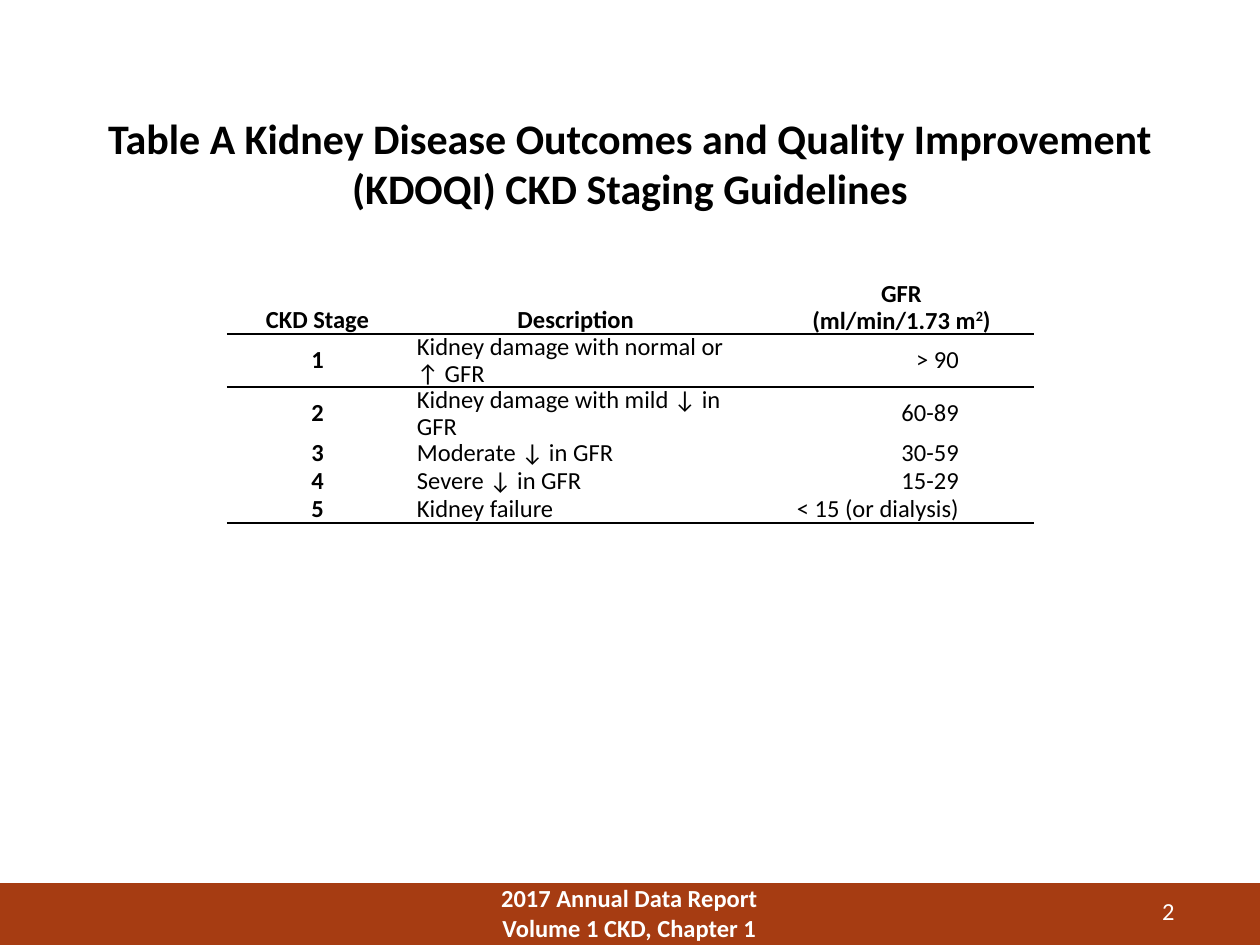
from lxml.etree import SubElement
from pptx import Presentation
from pptx.dml.color import RGBColor
from pptx.enum.shapes import MSO_SHAPE
from pptx.enum.text import MSO_ANCHOR, PP_ALIGN
from pptx.oxml.ns import qn
from pptx.util import Inches, Pt

RUST = RGBColor(0xA6, 0x3C, 0x12)
WHITE = RGBColor(0xFF, 0xFF, 0xFF)
BLACK = RGBColor(0x00, 0x00, 0x00)
PLAIN_TABLE = "{2D5ABB26-0587-4C30-8999-92F81FD0307C}"

STAGES = [
    ("CKD Stage", "Description", "GFR\n(ml/min/1.73 m"),
    ("1", "Kidney damage with normal or ↑ GFR", "> 90"),
    ("2", "Kidney damage with mild ↓ in GFR", "60-89"),
    ("3", "Moderate ↓ in GFR", "30-59"),
    ("4", "Severe ↓ in GFR", "15-29"),
    ("5", "Kidney failure", "< 15 (or dialysis)"),
]


class ReportSlide:
    font_name = "Calibri"
    body_size = 14
    title_size = 24
    grid_columns, grid_rows = 100, 75

    def __init__(self, deck):
        self.column = deck.slide_width / self.grid_columns
        self.row = deck.slide_height / self.grid_rows
        self.slide = deck.slides.add_slide(deck.slide_layouts[5])

    def area(self, left, top, width, height):
        return (round(left * self.column), round(top * self.row),
                round(width * self.column), round(height * self.row))

    def format(self, paragraph, align, color, size=body_size, bold=False):
        paragraph.alignment = align
        for run in paragraph.runs:
            run.font.name = self.font_name
            run.font.size = Pt(size)
            run.font.bold = bold
            run.font.color.rgb = color

    def bar(self, *cells):
        band = self.slide.shapes.add_shape(MSO_SHAPE.RECTANGLE, *self.area(*cells))
        band.shadow.inherit = False
        band.fill.solid()
        band.fill.fore_color.rgb = RUST
        band.line.fill.background()

    def label(self, text, *cells, align, anchor=MSO_ANCHOR.TOP, bold=False):
        frame = self.slide.shapes.add_textbox(*self.area(*cells)).text_frame
        frame.word_wrap = True
        frame.vertical_anchor = anchor
        frame.text = text
        for paragraph in frame.paragraphs:
            self.format(paragraph, align, WHITE, bold=bold)

    def title(self, text, *cells):
        heading = self.slide.shapes.title
        heading.left, heading.top, heading.width, heading.height = self.area(*cells)
        heading.text_frame.text = text
        heading.text_frame.vertical_anchor = MSO_ANCHOR.MIDDLE
        paragraph = heading.text_frame.paragraphs[0]
        paragraph.space_before = paragraph.space_after = Pt(6)
        self.format(paragraph, PP_ALIGN.CENTER, BLACK, self.title_size, True)

    def rule(self, cell, edge):
        properties = cell._tc.get_or_add_tcPr()
        line = SubElement(properties, qn(f"a:{edge}"), w=str(Pt(1)))
        fill = SubElement(line, qn("a:solidFill"))
        SubElement(fill, qn("a:srgbClr"), val=str(BLACK))

    def cell(self, cell, text, align, bold, anchor, margins):
        cell.text = text
        cell.vertical_anchor = anchor
        cell.margin_left, cell.margin_right = map(Inches, margins)
        cell.margin_top = cell.margin_bottom = 0
        for paragraph in cell.text_frame.paragraphs:
            paragraph.line_spacing = 0.9
            self.format(paragraph, align, BLACK, bold=bold)

    def unit_ending(self, cell):
        unit = cell.text_frame.paragraphs[-1]
        exponent, bracket = unit.add_run(), unit.add_run()
        exponent.text, bracket.text = "2", ")"
        self.format(unit, PP_ALIGN.CENTER, BLACK, bold=True)
        exponent.font._element.set("baseline", "30000")

    def indent(self, cell):
        for paragraph in cell.text_frame.paragraphs:
            paragraph._p.get_or_add_pPr().set("indent", str(Inches(0.2)))

    def table(self, rows, left, top, widths, heights):
        grid = self.slide.shapes.add_table(
            len(rows), len(widths),
            *self.area(left, top, sum(widths), sum(heights))).table
        grid.first_row = grid.horz_banding = False
        grid._tbl.tblPr.find(qn("a:tableStyleId")).text = PLAIN_TABLE
        for column, width in zip(grid.columns, widths):
            column.width = round(width * self.column)
        for row, height in zip(grid.rows, heights):
            row.height = round(height * self.row)

        last = len(rows) - 1
        aligns = (PP_ALIGN.CENTER, PP_ALIGN.LEFT, PP_ALIGN.RIGHT)
        for r, texts in enumerate(rows):
            for c, text in enumerate(texts):
                cell, header = grid.cell(r, c), r == 0
                self.cell(
                    cell, text,
                    align=PP_ALIGN.CENTER if header else aligns[c],
                    bold=header or c == 0,
                    anchor=MSO_ANCHOR.BOTTOM if header and c < 2 else MSO_ANCHOR.MIDDLE,
                    margins=(0.08, 0.6) if c == 2 and not header else (0.07, 0.07))
                if r == 1:
                    self.rule(cell, "lnT")
                if r in (0, last):
                    self.rule(cell, "lnB")
                cell.fill.background()
        self.unit_ending(grid.cell(0, 2))
        for r in (0, last):
            self.indent(grid.cell(r, 2))


def main():
    deck = Presentation()
    deck.slide_width, deck.slide_height = Inches(10), Inches(7.5)
    page = ReportSlide(deck)
    page.bar(0, 70.1, 100, 4.9)
    page.label("2017 Annual Data Report\nVolume 1 CKD, Chapter 1",
               35.8, 69.6, 28.3, 5.4, align=PP_ALIGN.CENTER, bold=True)
    page.label("2", 84.2, 70.8, 10, 3, align=PP_ALIGN.RIGHT, anchor=MSO_ANCHOR.MIDDLE)
    page.title("Table A Kidney Disease Outcomes and Quality Improvement "
               "(KDOQI) CKD Staging Guidelines", 5, 8.3, 90, 9.2)
    page.table(STAGES, 18, 22.3, widths=(14.4, 26.6, 23.1),
               heights=(2.9,) + (2.2,) * 5)
    deck.save("out.pptx")


if __name__ == "__main__":
    main()
